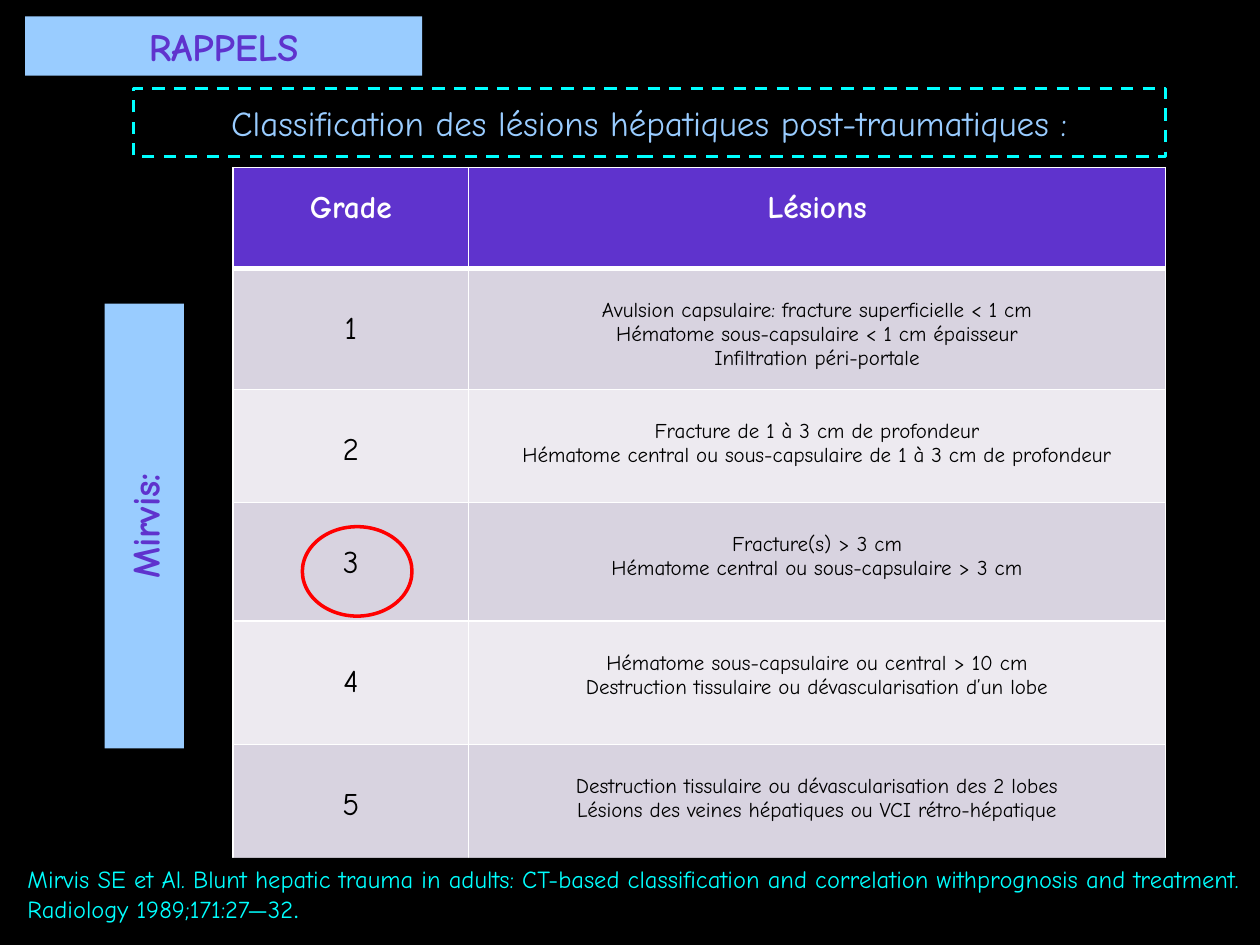
from lxml.etree import SubElement
from pptx import Presentation
from pptx.dml.color import RGBColor
from pptx.enum.dml import MSO_LINE
from pptx.enum.shapes import MSO_SHAPE as Shape
from pptx.enum.text import MSO_ANCHOR as Anchor, MSO_AUTO_SIZE as AutoSize, PP_ALIGN as Align
from pptx.oxml.ns import qn
from pptx.util import Inches, Pt

BLACK = RGBColor(0x00, 0x00, 0x00)
WHITE = RGBColor(0xFF, 0xFF, 0xFF)
VIOLET = RGBColor(0x5F, 0x33, 0xCD)
SKY = RGBColor(0x99, 0xCC, 0xFF)
CYAN = RGBColor(0x00, 0xFF, 0xFF)
RED = RGBColor(0xFF, 0x00, 0x00)
BANDS = (RGBColor(0xD8, 0xD3, 0xE0), RGBColor(0xED, 0xEA, 0xF0))
FONT = "Comic Neue"

COLUMN_WIDTHS = (1.87, 5.53)
ROW_HEIGHTS = (0.8, 0.96, 0.9, 0.94, 0.98, 1.05)
LESIONS = (
    ("Avulsion capsulaire: fracture superficielle < 1 cm",
     "Hématome sous-capsulaire < 1 cm épaisseur",
     "Infiltration péri-portale"),
    ("Fracture de 1 à 3 cm de profondeur",
     "Hématome central ou sous-capsulaire de 1 à 3 cm de profondeur"),
    ("Fracture(s) > 3 cm",
     "Hématome central ou sous-capsulaire > 3 cm"),
    ("Hématome sous-capsulaire ou central > 10 cm",
     "Destruction tissulaire ou dévascularisation d’un lobe"),
    ("Destruction tissulaire ou dévascularisation des 2 lobes",
     "Lésions des veines hépatiques ou VCI rétro-hépatique"),
)
CITATION = ("Mirvis SE et Al. Blunt hepatic trauma in adults: CT-based classification "
            "and correlation withprognosis and treatment. Radiology 1989;171:27—32")


def inches(*lengths):
    """Convert numbers to lengths."""
    return [Inches(length) for length in lengths]


def style(para, size, color, bold=False, align=Align.CENTER):
    """Format a whole paragraph."""
    para.alignment = align
    font = para.font
    font.name, font.size, font.bold = FONT, Pt(size), bold
    font.color.rgb = color


def paint(shape, color):
    """Give a shape a plain fill."""
    shape.fill.solid()
    shape.fill.fore_color.rgb = color


def add_panel(page, box, fill, text, size, color, bold=False, align=Align.CENTER):
    """Add a filled rectangle holding one paragraph."""
    panel = page.shapes.add_shape(Shape.RECTANGLE, *inches(*box))
    panel.shadow.inherit = False
    paint(panel, fill)
    panel.line.fill.background()
    frame = panel.text_frame
    frame.word_wrap = True
    frame.vertical_anchor = Anchor.MIDDLE
    para = frame.paragraphs[0]
    para.add_run().text = text
    style(para, size, color, bold, align)
    return panel


def add_title(page, box):
    """Place the slide title on its sky-blue band."""
    title = page.shapes.title
    title.left, title.top, title.width, title.height = inches(*box)
    paint(title, SKY)
    frame = title.text_frame
    frame.text = "RAPPELS"
    frame.auto_size = AutoSize.NONE
    frame.vertical_anchor = Anchor.MIDDLE
    style(frame.paragraphs[0], 22, VIOLET, bold=True)


def add_subtitle(page, box):
    """Add the dashed heading above the table."""
    heading = add_panel(page, box, BLACK,
                        "Classification des lésions hépatiques post-traumatiques :", 20, SKY)
    heading.line.color.rgb = CYAN
    heading.line.width = Pt(1.75)
    heading.line.dash_style = MSO_LINE.DASH


def add_side_label(page, box):
    """Add the vertical label of the classification."""
    label = add_panel(page, box, SKY, "Mirvis:", 22, VIOLET, bold=True)
    label.text_frame._txBody.bodyPr.set("vert", "vert270")


def set_borders(cell, top, bottom):
    """Draw white borders, with the given top and bottom widths."""
    properties = cell._tc.get_or_add_tcPr()
    for side, width in (("L", 1), ("R", 1), ("T", top), ("B", bottom)):
        line = SubElement(properties, qn(f"a:ln{side}"), w=str(Pt(width)))
        fill = SubElement(line, qn("a:solidFill"))
        SubElement(fill, qn("a:srgbClr"), val=str(WHITE))


def fill_cell(cell, lines, margin, size, color, bold=False):
    """Write centred lines below a top margin."""
    cell.margin_top = Inches(margin)
    cell.text_frame.text = "\n".join(lines)
    for para in cell.text_frame.paragraphs:
        style(para, size, color, bold)


def add_grades(page, box):
    """Add the table of grades and lesions."""
    table = page.shapes.add_table(len(ROW_HEIGHTS), len(COLUMN_WIDTHS), *inches(*box)).table
    for column, width in zip(table.columns, COLUMN_WIDTHS):
        column.width = Inches(width)
    for index, (row, height) in enumerate(zip(table.rows, ROW_HEIGHTS)):
        row.height = Inches(height)
        for cell in row.cells:
            set_borders(cell, 3 if index == 1 else 1, 3 if index == 0 else 1)
            paint(cell, BANDS[(index - 1) % 2] if index else VIOLET)
    for column, heading in enumerate(("Grade", "Lésions")):
        fill_cell(table.cell(0, column), [heading], 0.18, 18, WHITE, bold=True)
    for grade, lesions in enumerate(LESIONS, start=1):
        fill_cell(table.cell(grade, 0), [str(grade)], 0.34, 18, BLACK)
        fill_cell(table.cell(grade, 1), lesions, 0.24, 12, BLACK)


def add_ring(page, box):
    """Circle the highlighted grade in red."""
    ring = page.shapes.add_shape(Shape.OVAL, *inches(*box))
    ring.shadow.inherit = False
    ring.fill.background()
    ring.line.color.rgb = RED
    ring.line.width = Pt(2)


def add_citation(page, box):
    """Add the reference at the foot of the slide."""
    panel = add_panel(page, box, BLACK, CITATION, 14, CYAN, align=Align.LEFT)
    frame = panel.text_frame
    frame.vertical_anchor = Anchor.TOP
    frame.auto_size = AutoSize.SHAPE_TO_FIT_TEXT
    stop = frame.paragraphs[0].add_run()
    stop.text = "."
    stop.font.name, stop.font.size = "Calibri", Pt(12)


def main():
    """Build the slide and save it."""
    deck = Presentation()
    deck.slide_width, deck.slide_height = inches(10, 7.5)
    page = deck.slides.add_slide(deck.slide_layouts[5])
    paint(page.background, BLACK)
    add_title(page, (0.2, 0.13, 3.15, 0.47))
    add_grades(page, (1.85, 1.33, 7.4, 5.63))
    add_ring(page, (2.4, 4.18, 0.87, 0.71))
    add_side_label(page, (0.83, 2.41, 0.63, 3.53))
    add_citation(page, (0.12, 6.81, 10, 0.57))
    add_subtitle(page, (1.06, 0.7, 8.19, 0.54))
    deck.save("out.pptx")


if __name__ == "__main__":
    main()
